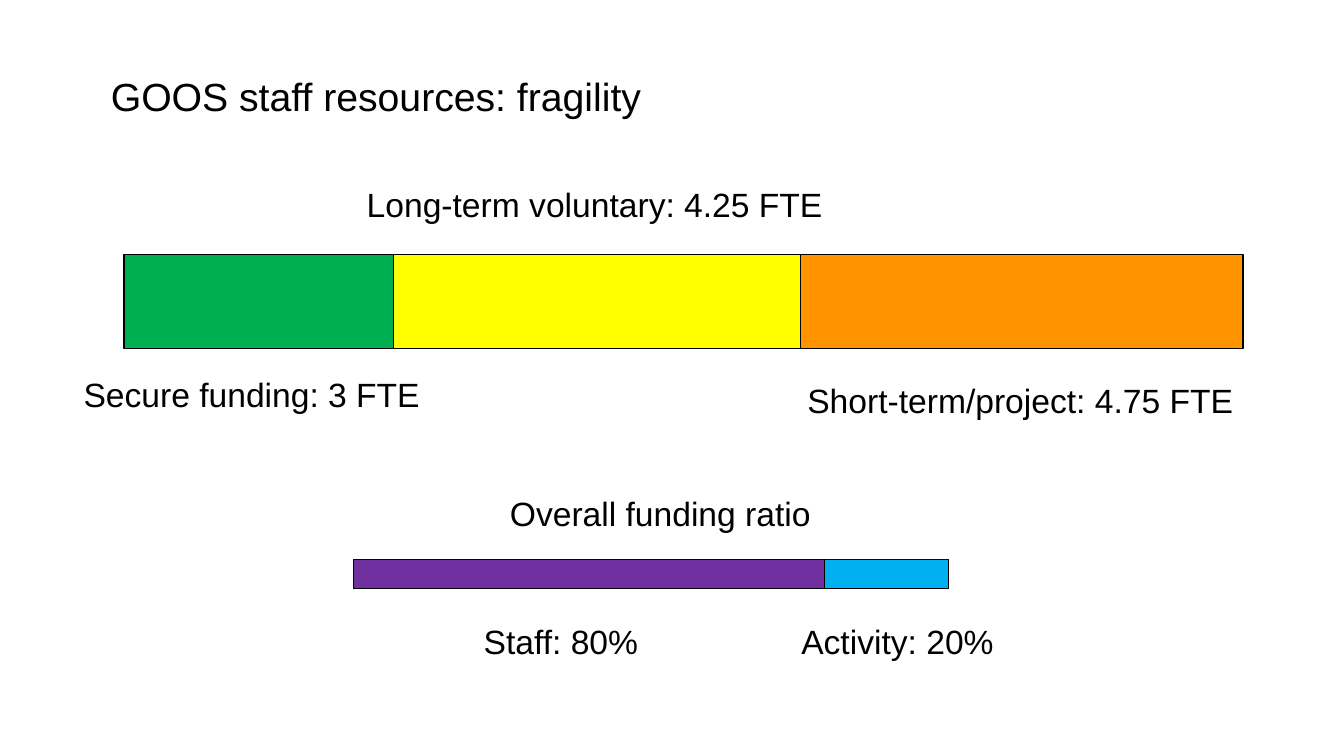
"""Build the staff resources slide with two segmented funding bars."""
from pptx import Presentation
from pptx.dml.color import RGBColor
from pptx.enum.shapes import MSO_SHAPE
from pptx.enum.text import MSO_ANCHOR, MSO_AUTO_SIZE, PP_ALIGN
from pptx.util import Inches, Pt

RECTANGLE = MSO_SHAPE.RECTANGLE
MIDDLE = MSO_ANCHOR.MIDDLE
FIT_SHAPE = MSO_AUTO_SIZE.SHAPE_TO_FIT_TEXT
NO_FIT = MSO_AUTO_SIZE.NONE
LEFT = PP_ALIGN.LEFT
TITLE_ONLY = 5

COLORS = {
    "ink": "000000",
    "paper": "FFFFFF",
    "secure": "00B050",
    "voluntary": "FFFF00",
    "project": "FF9300",
    "staff": "7030A0",
    "activity": "00B0F0",
}


class FundingSlide:
    """Hold the style and the slide, with lengths in percent of its size."""

    font = "Arial"
    title_size = 28
    label_size = 24
    label_height = 6.67
    outline = 0.75

    def __init__(self, deck):
        self.width = deck.slide_width
        self.height = deck.slide_height
        self.slide = deck.slides.add_slide(deck.slide_layouts[TITLE_ONLY])
        background = self.slide.background.fill
        background.solid()
        background.fore_color.rgb = self.color("paper")

    def color(self, name):
        return RGBColor.from_string(COLORS[name])

    def place(self, left, top, width, height):
        return (
            round(self.width * left / 100),
            round(self.height * top / 100),
            round(self.width * width / 100),
            round(self.height * height / 100),
        )

    def add_words(self, frame, words, size):
        paragraph = frame.paragraphs[0]
        paragraph.alignment = LEFT
        run = paragraph.add_run()
        run.text = words
        run.font.name = self.font
        run.font.size = Pt(size)
        run.font.color.rgb = self.color("ink")

    def title(self, words, *box):
        heading = self.slide.shapes.title
        heading.left, heading.top, heading.width, heading.height = self.place(*box)
        frame = heading.text_frame
        frame.vertical_anchor = MIDDLE
        frame.auto_size = NO_FIT
        self.add_words(frame, words, self.title_size)

    def label(self, words, left, top, width):
        box = self.place(left, top, width, self.label_height)
        frame = self.slide.shapes.add_textbox(*box).text_frame
        frame.word_wrap = False
        frame.auto_size = FIT_SHAPE
        self.add_words(frame, words, self.label_size)

    def bar(self, left, top, height, segments):
        for name, width in segments:
            box = self.place(left, top, width, height)
            segment = self.slide.shapes.add_shape(RECTANGLE, *box)
            segment.shadow.inherit = False
            segment.fill.solid()
            segment.fill.fore_color.rgb = self.color(name)
            segment.line.color.rgb = self.color("ink")
            segment.line.width = Pt(self.outline)
            left += width


def main():
    deck = Presentation()
    deck.slide_width = Inches(13.33)
    deck.slide_height = Inches(7.5)
    page = FundingSlide(deck)

    page.title("GOOS staff resources: fragility", 7.5, 4.4, 85, 16.67)

    page.label("Long-term voluntary: 4.25 FTE", 26.55, 23.73, 35.78)
    page.bar(9.23, 33.6, 12.53,
             [("secure", 20.03), ("voluntary", 30.3), ("project", 32.93)])
    page.label("Secure funding: 3 FTE", 5.48, 48.8, 27.45)
    page.label("Short-term/project: 4.75 FTE", 59.33, 49.6, 33.53)

    page.label("Overall funding ratio", 37.2, 64.53, 24.15)
    page.bar(26.33, 74, 3.87, [("staff", 35.03), ("activity", 9.23)])
    page.label("Staff: 80%", 35.25, 81.47, 13.13)
    page.label("Activity: 20%", 58.88, 81.47, 15.98)

    deck.save("out.pptx")


if __name__ == "__main__":
    main()
